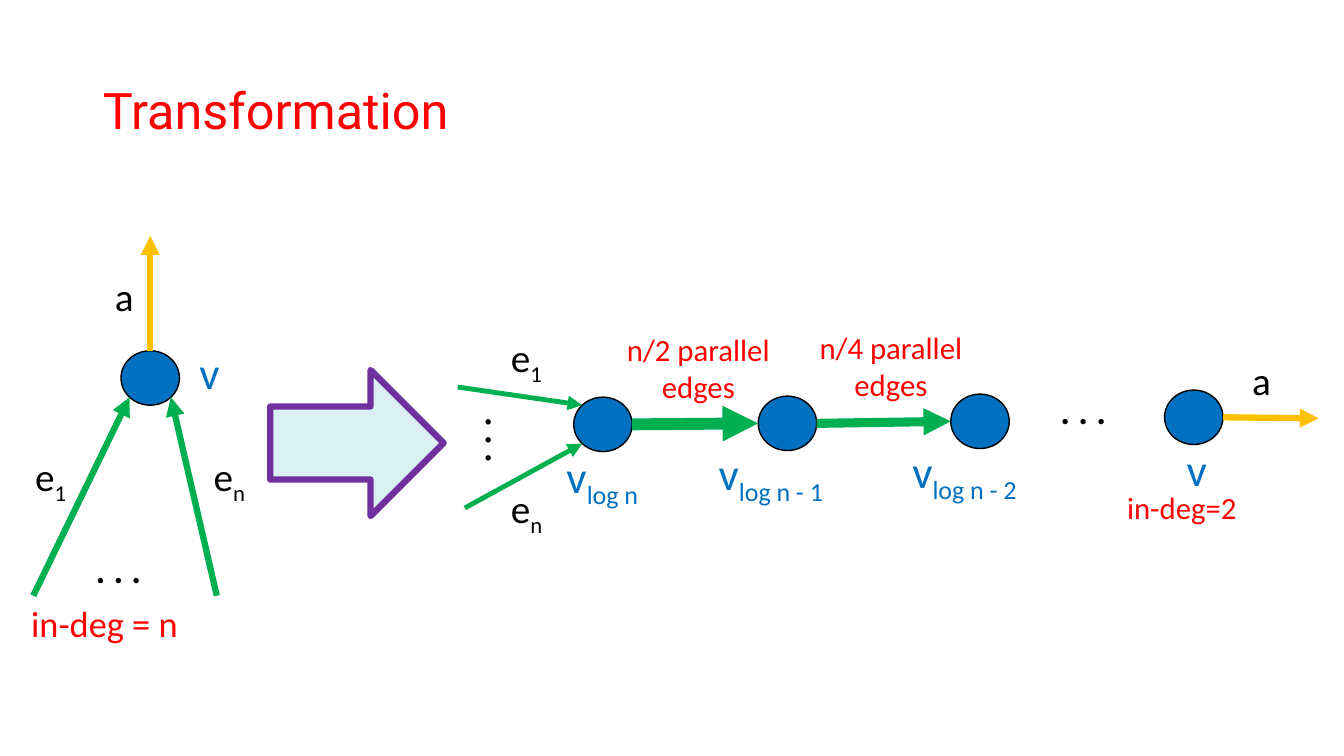
from dataclasses import dataclass
from math import sqrt

from lxml import etree
from pptx import Presentation
from pptx import util as u
from pptx.dml.color import RGBColor
from pptx.enum import shapes, text
from pptx.oxml import ns

COLORS = {
    "red": "FF0000",
    "blue": "0070C0",
    "green": "00B050",
    "amber": "FFC000",
    "purple": "7030A0",
    "pale": "DBF0F3",
    "black": "000000",
}
NODE_WIDTH, NODE_HEIGHT = 0.58, 0.54
DIAGONAL = 1 / sqrt(2)
Point = tuple[float, float]


@dataclass
class Node:
    x: float  # centre
    y: float

    def site(self, across: float, down: float) -> Point:
        """Point on the outline in the given unit direction."""
        return self.x + across * NODE_WIDTH / 2, self.y + down * NODE_HEIGHT / 2


@dataclass
class Edge:
    tip: Point  # the end with the arrowhead
    end: Point
    color: str
    width: float


@dataclass
class Label:
    words: str
    left: float
    top: float
    width: float
    height: float
    size: int
    color: str = "black"
    subscript: str = ""
    bold: bool = False
    wrap: bool = False
    rotation: int = 0


def rgb(name: str) -> RGBColor:
    return RGBColor.from_string(COLORS[name])


def draw_shape(slide, kind, box: tuple[float, ...], fill: str, line: str, width: float) -> None:
    shape = slide.shapes.add_shape(kind, *map(u.Inches, box))
    shape.shadow.inherit = False
    shape.fill.solid()
    shape.fill.fore_color.rgb = rgb(fill)
    shape.line.color.rgb = rgb(line)
    shape.line.width = u.Pt(width)


def draw_node(slide, node: Node) -> None:
    box = (node.x - NODE_WIDTH / 2, node.y - NODE_HEIGHT / 2, NODE_WIDTH, NODE_HEIGHT)
    draw_shape(slide, shapes.MSO_SHAPE.OVAL, box, "blue", "black", 1)


def draw_edge(slide, edge: Edge) -> None:
    connector = slide.shapes.add_connector(
        shapes.MSO_CONNECTOR.STRAIGHT, *map(u.Inches, edge.tip + edge.end))
    connector.line.color.rgb = rgb(edge.color)
    connector.line.width = u.Pt(edge.width)
    outline = connector.line._get_or_add_ln()
    etree.SubElement(outline, ns.qn("a:headEnd"), type="triangle")
    etree.SubElement(connector._element.spPr, ns.qn("a:effectLst"))


def draw_label(slide, label: Label) -> None:
    box = slide.shapes.add_textbox(
        *map(u.Inches, (label.left, label.top, label.width, label.height)))
    box.rotation = label.rotation
    frame = box.text_frame
    frame.word_wrap = label.wrap
    frame.auto_size = text.MSO_AUTO_SIZE.SHAPE_TO_FIT_TEXT
    frame.text = label.words
    if label.subscript:
        run = frame.paragraphs[0].add_run()
        run.text = label.subscript
        run._r.get_or_add_rPr().set("baseline", "-25000")
    for paragraph in frame.paragraphs:
        for run in paragraph.runs:
            run.font.name = "Calibri"
            run.font.size = u.Pt(label.size)
            run.font.bold = label.bold
            run.font.color.rgb = rgb(label.color)
    for paragraph in frame.paragraphs[1:]:
        paragraph.alignment = text.PP_ALIGN.CENTER


def draw_title(slide, words: str) -> None:
    title = slide.shapes.title
    title.left, title.top, title.width, title.height = map(u.Inches, (0.92, 0.4, 11.5, 1.45))
    title.text_frame.text = words
    title.text_frame.vertical_anchor = text.MSO_ANCHOR.MIDDLE
    paragraph = title.text_frame.paragraphs[0]
    paragraph.alignment = text.PP_ALIGN.LEFT
    paragraph.line_spacing = 0.9
    font = paragraph.runs[0].font
    font.name, font.size = "Roboto", u.Pt(36)
    font.color.rgb = rgb("red")


# Nodes: the vertex before, and the chain that replaces it
before = Node(1.49, 3.75)
first, second, third, last = chain = [
    Node(5.98, 4.21), Node(7.81, 4.2), Node(9.72, 4.18), Node(11.84, 4.14)]

EDGES = [
    Edge((1.49, 2.34), before.site(0, -1), "amber", 4.5),
    Edge(before.site(-DIAGONAL, DIAGONAL), (0.33, 5.91), "green", 4.5),
    Edge(before.site(DIAGONAL, DIAGONAL), (2.15, 5.91), "green", 4.5),
    Edge(first.site(-DIAGONAL, -DIAGONAL), (4.54, 3.84), "green", 3.5),
    Edge(first.site(-DIAGONAL, DIAGONAL), (4.61, 5.04), "green", 3.5),
    Edge(second.site(-1, 0), first.site(1, 0), "green", 8.5),
    Edge(third.site(-1, 0), second.site(1, 0), "green", 6.5),
    Edge((13.08, 4.15), last.site(1, 0), "amber", 4.5),
]

LABELS = [
    # Vertex before
    Label("a", 1.04, 2.65, 0.39, 0.57, 28),
    Label("v", 1.88, 3.37, 0.46, 0.64, 32, "blue", wrap=True),
    Label("e", 0.25, 4.44, 0.53, 0.57, 28, subscript="1"),
    Label("e", 2.02, 4.44, 0.53, 0.57, 28, subscript="n", wrap=True),
    Label(". . .", 0.85, 5.38, 0.66, 0.54, 26, bold=True),
    Label("in-deg = n", 0.21, 5.91, 1.67, 0.54, 26, "red"),
    # Edges into the chain
    Label("e", 4.97, 3.26, 0.53, 0.57, 28, subscript="1"),
    Label(". . .", 4.63, 4.1, 0.66, 0.54, 26, bold=True, rotation=90),
    Label("e", 4.97, 4.76, 0.53, 0.57, 28, subscript="n", wrap=True),
    # Chain
    Label("v", 5.52, 4.4, 1.15, 0.64, 32, "blue", "log n", wrap=True),
    Label("n/2 parallel\nedges", 6.12, 3.23, 1.63, 0.84, 22, "red"),
    Label("v", 7.03, 4.37, 1.66, 0.64, 32, "blue", "log n - 1", wrap=True),
    Label("n/4 parallel\nedges", 8.03, 3.21, 1.63, 0.84, 22, "red"),
    Label("v", 8.95, 4.35, 1.66, 0.64, 32, "blue", "log n - 2", wrap=True),
    Label(". . .", 10.42, 3.8, 0.66, 0.54, 26, bold=True),
    Label("v", 11.67, 4.33, 0.46, 0.64, 32, "blue", wrap=True),
    Label("in-deg=2", 11.08, 4.8, 1.3, 0.47, 22, "red"),
    Label("a", 12.32, 3.49, 0.39, 0.57, 28),
]


def main() -> None:
    presentation = Presentation()
    presentation.slide_width = u.Inches(13.33)
    presentation.slide_height = u.Inches(7.5)
    slide = presentation.slides.add_slide(presentation.slide_layouts[5])

    draw_title(slide, "Transformation")
    draw_shape(slide, shapes.MSO_SHAPE.RIGHT_ARROW, (2.68, 3.67, 1.72, 1.45),
               "pale", "purple", 4.5)
    for node in [before, *chain]:
        draw_node(slide, node)
    for edge in EDGES:
        draw_edge(slide, edge)
    for label in LABELS:
        draw_label(slide, label)

    presentation.save("out.pptx")


if __name__ == "__main__":
    main()
